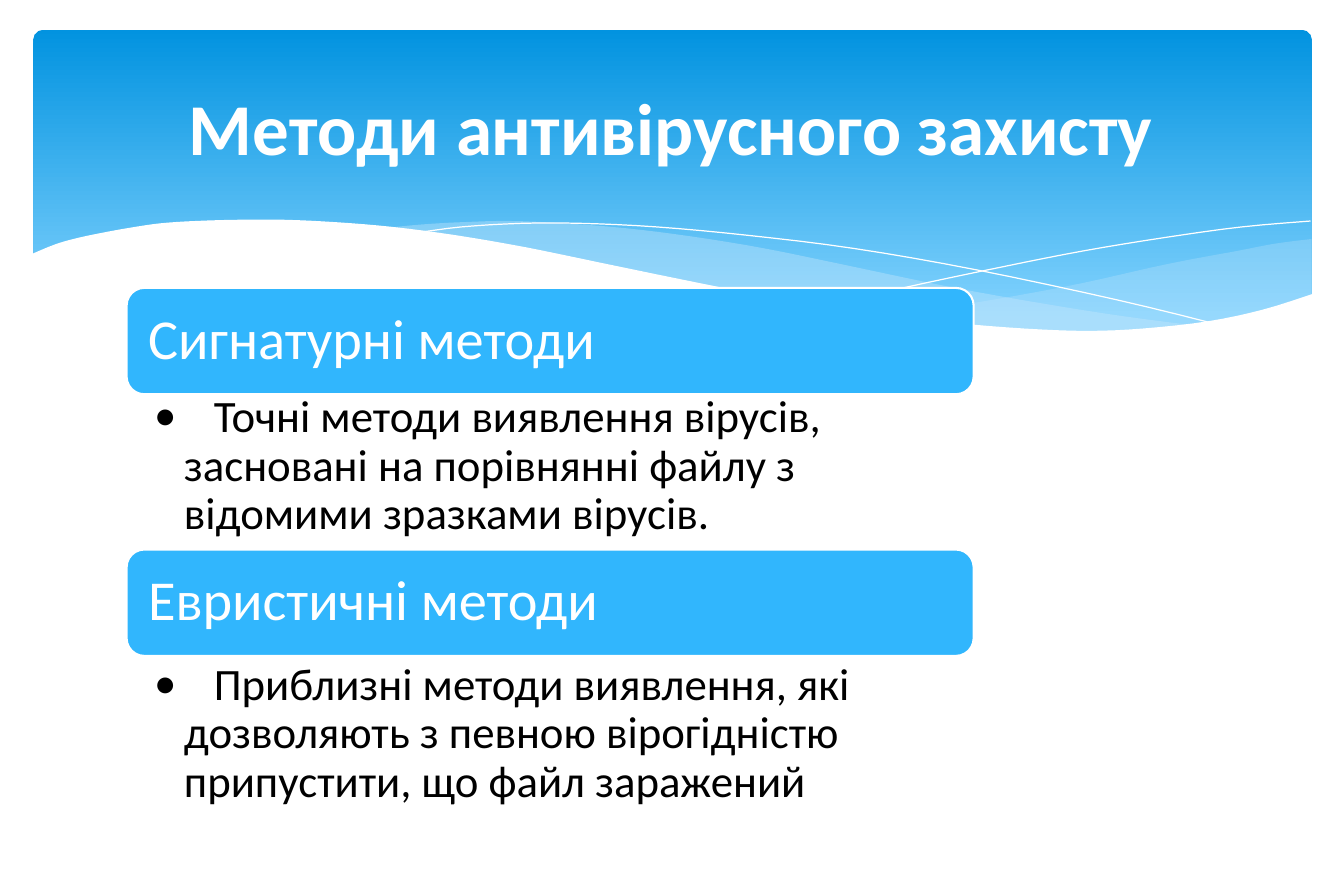
from lxml.etree import SubElement
from pptx import Presentation
from pptx.dml.color import RGBColor
from pptx.enum.shapes import MSO_SHAPE as SHAPE
from pptx.enum.text import MSO_ANCHOR as ANCHOR, PP_ALIGN as ALIGN
from pptx.oxml.ns import qn
from pptx.util import Pt

SCALE = 9144
FONT = "Calibri"
COLORS = {"white": "FFFFFF", "black": "000000", "card": "31B6FD",
          "sky_top": "0293E0", "sky_bottom": "83D3FE", "wave": "C6E7FC"}

TITLE = "Методи антивірусного захисту"
METHODS = [
    ("Сигнатурні методи", 241, 325,
     "Точні методи виявлення вірусів, засновані на порівнянні файлу з відомими зразками вірусів."),
    ("Евристичні методи", 460, 549,
     "Приблизні методи виявлення, які дозволяють з певною вірогідністю припустити, що файл заражений"),
]
CARD_LEFT, CARD_WIDTH, CARD_HEIGHT, BODY_HEIGHT = 106, 709, 89, 135
CARD_PAD = 4
BULLET_INDENT, FIRST_WORD_TAB = 25, 50

RIGHT_WAVE = [
    [(1098, 200), (1067, 204), (1036, 210), (1003, 216), (968, 223),
     (906, 237), (848, 248), (794, 257), (744, 265)],
    [(744, 265), (777, 269), (808, 272), (838, 275), (878, 277), (916, 278),
     (961, 276), (1000, 272), (1036, 265), (1068, 257), (1098, 247)],
]
MIDDLE_WAVE = [
    [(1004, 273), (942, 265), (872, 254), (794, 240), (708, 222), (640, 208),
     (579, 198), (523, 191), (472, 187), (427, 185), (387, 186), (352, 188), (322, 191)],
    [(322, 191), (363, 196), (408, 203), (455, 211), (506, 222), (596, 240),
     (676, 255), (749, 266), (813, 274), (869, 277), (920, 278), (965, 277), (1004, 273)],
]
FALLING_LINE = [[(348, 195), (386, 190), (436, 187), (487, 187), (550, 190), (626, 197),
                 (715, 208), (818, 226), (935, 251), (1021, 272)]]
RISING_LINE = [[(690, 257), (756, 241), (841, 223), (907, 210), (974, 199),
                (1039, 190), (1097, 185)]]
WHITE_WAVE = [
    [(1099, 246), (1058, 259), (1011, 269), (957, 275), (910, 277), (857, 275),
     (796, 270), (728, 262), (652, 250), (566, 233), (503, 220), (440, 207),
     (382, 197), (329, 190), (281, 186), (238, 184), (199, 184), (164, 185),
     (134, 187), (107, 191), (85, 195), (66, 199), (51, 203), (40, 207), (26, 213)],
    [(26, 329)],
    [(1099, 329)],
]
WAVES = [
    (RIGHT_WAVE, "wave", 29),
    (MIDDLE_WAVE, "wave", 40),
    (FALLING_LINE, None, None),
    (RISING_LINE, None, None),
    (WHITE_WAVE, "white", None),
]


def px(*values):
    return [round(value * SCALE) for value in values]


def color(name):
    return RGBColor.from_string(COLORS[name])


def smooth(points, steps=4):
    padded = [points[0], *points, points[-1]]
    curve = [points[0]]
    for a, b, c, d in zip(padded, padded[1:], padded[2:], padded[3:]):
        for step in range(1, steps + 1):
            t = step / steps
            curve.append(tuple(
                (2 * q + (r - p) * t + (2 * p - 5 * q + 4 * r - s) * t ** 2
                 + (3 * q - p - 3 * r + s) * t ** 3) / 2
                for p, q, r, s in zip(a, b, c, d)))
    return curve


def add_wave(page, curves, fill, opacity):
    points = [px(*point) for curve in curves for point in smooth(curve)]
    builder = page.shapes.build_freeform(*points[0])
    builder.add_line_segments(points[1:], close=fill is not None)
    wave = builder.convert_to_shape()
    wave.shadow.inherit = False
    if fill is None:
        wave.fill.background()
        wave.line.color.rgb = color("white")
        wave.line.width = Pt(0)
        return
    wave.line.fill.background()
    wave.fill.solid()
    wave.fill.fore_color.rgb = color(fill)
    if opacity:
        tint = wave.fill._xPr.find(".//" + qn("a:srgbClr"))
        SubElement(tint, qn("a:alpha"), val=str(opacity * 1000))


def add_panel(page, *place):
    panel = page.shapes.add_shape(SHAPE.ROUNDED_RECTANGLE, *px(*place))
    panel.shadow.inherit = False
    return panel


def add_text(page, text, place, size, fill="white", bold=False, align=ALIGN.LEFT,
             anchor=ANCHOR.MIDDLE, insets=(10, 5, 10, 5), spacing=None, bullet=False):
    frame = page.shapes.add_textbox(*px(*place)).text_frame
    frame.word_wrap = True
    frame.vertical_anchor = anchor
    (frame.margin_left, frame.margin_top,
     frame.margin_right, frame.margin_bottom) = px(*insets)
    para = frame.paragraphs[0]
    para.alignment = align
    para.line_spacing = spacing
    if bullet:
        indent, tab = px(BULLET_INDENT, FIRST_WORD_TAB)
        props = para._p.get_or_add_pPr()
        props.set("marL", str(indent))
        props.set("indent", str(-indent))
        SubElement(props, qn("a:buFont"), typeface=FONT)
        SubElement(props, qn("a:buChar"), char="•")
        tabs = SubElement(props, qn("a:tabLst"))
        SubElement(tabs, qn("a:tab"), pos=str(tab), algn="l")
        text = "\t" + text
    span = para.add_run()
    span.text = text
    span.font.name = FONT
    span.font.size = Pt(size)
    span.font.bold = bold
    span.font.color.rgb = color(fill)


def add_banner(page):
    banner = add_panel(page, 28, 25, 1070, 270)
    banner.adjustments[0] = 0.03
    banner.line.fill.background()
    banner.fill.gradient()
    banner.fill.gradient_angle = 270
    stops = banner.fill.gradient_stops
    for stop, name, position in zip(stops, ("sky_top", "sky_bottom"), (0, 0.9)):
        stop.color.rgb = color(name)
        stop.position = position


def add_method(page, heading, top, body_top, body):
    card = add_panel(page, CARD_LEFT, top, CARD_WIDTH, CARD_HEIGHT)
    card.fill.solid()
    card.fill.fore_color.rgb = color("card")
    card.line.color.rgb = color("white")
    card.line.width = Pt(1.25)
    inner = (CARD_LEFT + CARD_PAD, top + CARD_PAD,
             CARD_WIDTH - 2 * CARD_PAD, CARD_HEIGHT - 2 * CARD_PAD)
    add_text(page, heading, inner, 34, insets=(14, 14, 14, 14), spacing=0.9)
    add_text(page, body, (CARD_LEFT, body_top, CARD_WIDTH, BODY_HEIGHT), 27,
             fill="black", anchor=ANCHOR.TOP, insets=(23, 5, 26, 5),
             spacing=0.9, bullet=True)


def main():
    deck = Presentation()
    deck.slide_width, deck.slide_height = px(1125, 750)
    page = deck.slides.add_slide(deck.slide_layouts[6])
    add_banner(page)
    for wave in WAVES:
        add_wave(page, *wave)
    add_text(page, TITLE, (56, 37, 1012, 137), 44, bold=True, align=ALIGN.CENTER)
    for method in METHODS:
        add_method(page, *method)
    deck.save("out.pptx")


if __name__ == "__main__":
    main()
